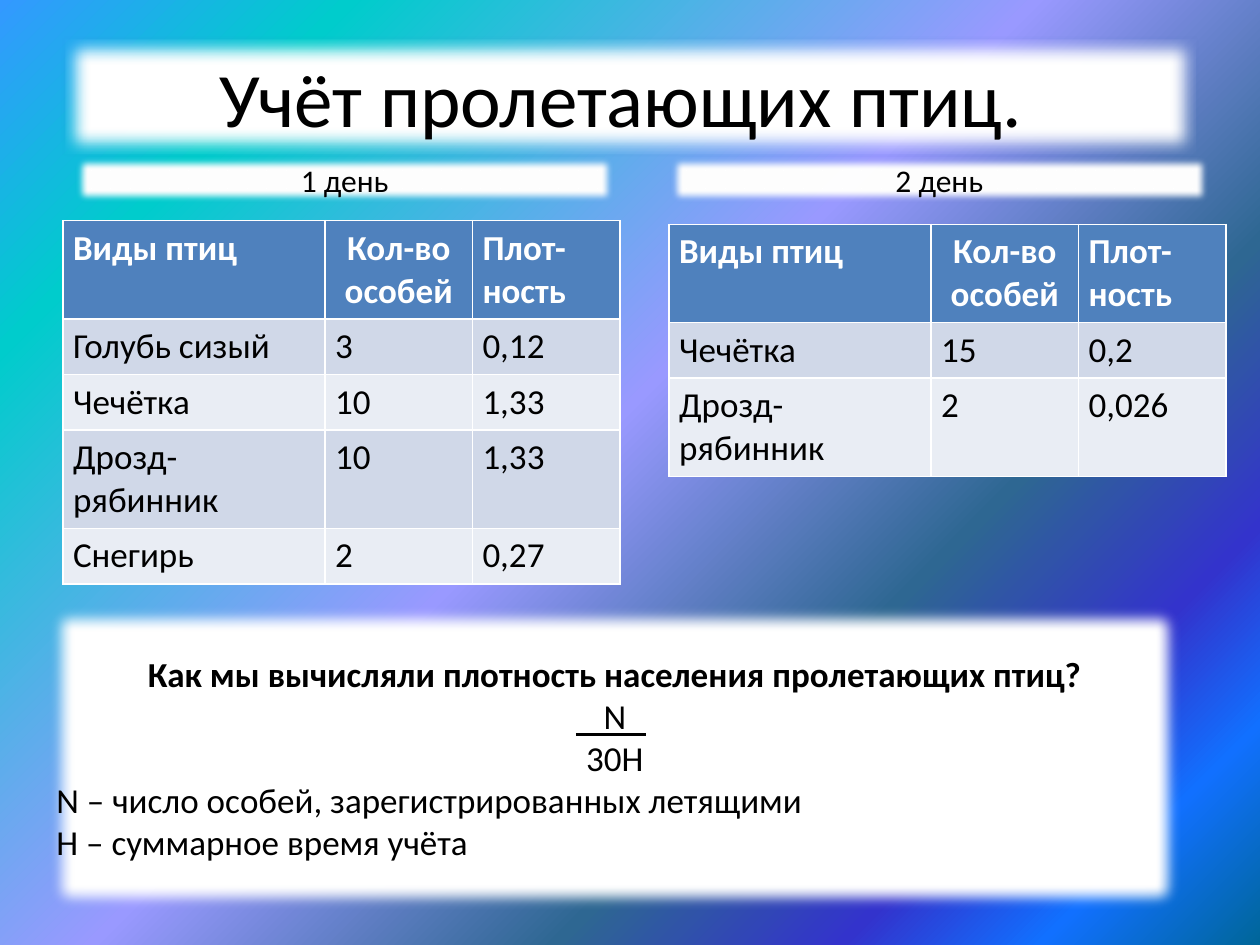
"""Build a slide comparing two days of counting birds in flight."""
from dataclasses import dataclass

from lxml.etree import SubElement
from pptx import Presentation
from pptx.dml.color import RGBColor
from pptx.enum.shapes import MSO_CONNECTOR, MSO_SHAPE
from pptx.enum.text import MSO_ANCHOR, PP_ALIGN
from pptx.oxml.ns import qn
from pptx.slide import Slide
from pptx.util import Inches, Pt

WHITE = RGBColor(0xFF, 0xFF, 0xFF)
BLACK = RGBColor(0x00, 0x00, 0x00)
BLUE = RGBColor(0x4F, 0x81, 0xBD)
DARK_BLUE = RGBColor(0x3A, 0x5F, 0x8C)
BAND_DARK = RGBColor(0xD0, 0xD8, 0xE8)
BAND_LIGHT = RGBColor(0xE9, 0xED, 0xF4)
BACKGROUND = [
    (0, RGBColor(0x33, 0x99, 0xFF)),
    (16, RGBColor(0x00, 0xCC, 0xCC)),
    (47, RGBColor(0x99, 0x99, 0xFF)),
    (68, RGBColor(0x2E, 0x67, 0x92)),
    (81, RGBColor(0x33, 0x33, 0xCC)),
    (90, RGBColor(0x11, 0x70, 0xFF)),
    (100, RGBColor(0x00, 0x66, 0x99)),
]

HEADER = ["Виды птиц", "Кол-во особей", "Плот-ность"]
FIRST_DAY = [
    ["Голубь сизый", "3", "0,12"],
    ["Чечётка", "10", "1,33"],
    ["Дрозд-рябинник", "10", "1,33"],
    ["Снегирь", "2", "0,27"],
]
SECOND_DAY = [["Чечётка", "15", "0,2"], ["Дрозд-рябинник", "2", "0,026"]]
COLUMN_WIDTHS = [20.8, 11.7, 11.7]
ROW_HEIGHT = 4.1


def grid(units):
    """Convert units of a 100 by 75 grid to a length."""
    return Inches(units / 10)


@dataclass
class Painter:
    """Hold the style and the current slide."""

    page: Slide
    font: str = "Calibri"
    size: int = 20

    def background(self, stops):
        """Fill the slide with a diagonal gradient."""
        fill = self.page.background.fill
        fill.gradient()
        fill.gradient_angle = 315
        stop_list = next(self.page.background._cSld.iter(qn("a:gsLst")))
        for stop in list(stop_list):
            stop_list.remove(stop)
        for position, color in stops:
            stop = SubElement(stop_list, qn("a:gs"), pos=str(position * 1000))
            SubElement(stop, qn("a:srgbClr"), val=str(color))

    def add_text(self, para, text, size=None, color=BLACK, bold=False, align=PP_ALIGN.LEFT):
        """Add one formatted run to a paragraph."""
        para.alignment = align
        span = para.add_run()
        span.text = text
        span.font.name = self.font
        span.font.size = Pt(size or self.size)
        span.font.bold = bold
        span.font.color.rgb = color

    def soften(self, box, line_color, radius):
        """Give a box a white fill, an outline and soft edges."""
        box.fill.solid()
        box.fill.fore_color.rgb = WHITE
        box.line.color.rgb = line_color
        box.line.width = Pt(2)
        box.shadow.inherit = False
        effects = box._element.spPr.find(qn("a:effectLst"))
        SubElement(effects, qn("a:softEdge"), rad=str(int(Pt(radius))))
        box.text_frame.word_wrap = True
        box.text_frame.vertical_anchor = MSO_ANCHOR.MIDDLE

    def title(self, text, left, top, width, height):
        """Place and format the title placeholder."""
        box = self.page.shapes.title
        box.left, box.top = grid(left), grid(top)
        box.width, box.height = grid(width), grid(height)
        self.soften(box, BLUE, 9)
        self.add_text(box.text_frame.paragraphs[0], text, 44, align=PP_ALIGN.CENTER)

    def panel(self, lines, left, top, width, height, radius):
        """Add a soft white panel with one paragraph per line."""
        box = self.page.shapes.add_shape(
            MSO_SHAPE.RECTANGLE, grid(left), grid(top), grid(width), grid(height))
        self.soften(box, DARK_BLUE, radius)
        frame = box.text_frame
        for index, (text, style) in enumerate(lines):
            para = frame.add_paragraph() if index else frame.paragraphs[0]
            self.add_text(para, text, **style)

    def table(self, rows, left, top):
        """Add a banded table below the common header."""
        records = [HEADER, *rows]
        table = self.page.shapes.add_table(
            len(records), len(HEADER), grid(left), grid(top),
            grid(sum(COLUMN_WIDTHS)), grid(ROW_HEIGHT * len(records))).table
        for column, width in zip(table.columns, COLUMN_WIDTHS):
            column.width = grid(width)
        for row, record in enumerate(records):
            band = BAND_DARK if row % 2 else BAND_LIGHT
            for column, text in enumerate(record):
                cell = table.cell(row, column)
                cell.margin_left = cell.margin_right = grid(0.8)
                cell.fill.solid()
                cell.fill.fore_color.rgb = band if row else BLUE
                centred = row == 0 and column == 1
                self.add_text(
                    cell.text_frame.paragraphs[0], text,
                    color=BLACK if row else WHITE, bold=row == 0,
                    align=PP_ALIGN.CENTER if centred else PP_ALIGN.LEFT)

    def fraction_bar(self, left, right, height):
        """Draw the bar of the fraction."""
        bar = self.page.shapes.add_connector(
            MSO_CONNECTOR.STRAIGHT, grid(left), grid(height), grid(right), grid(height))
        bar.line.color.rgb = BLACK
        bar.line.width = Pt(2)
        SubElement(bar._element.spPr, qn("a:effectLst"))


def main():
    """Create the deck and save it."""
    deck = Presentation()
    deck.slide_width, deck.slide_height = grid(100), grid(75)
    painter = Painter(deck.slides.add_slide(deck.slide_layouts[5]))
    centred = {"align": PP_ALIGN.CENTER}

    painter.background(BACKGROUND)
    painter.title("Учёт пролетающих птиц. ", 5, 3, 90, 9.3)
    painter.table(FIRST_DAY, 5, 17.5)
    painter.panel([
        ("Как мы вычисляли плотность населения пролетающих птиц?", {"bold": True, **centred}),
        ("N", centred),
        ("30H", centred),
        ("N – число особей, зарегистрированных летящими", {}),
        ("H – суммарное время учёта", {}),
    ], 3.5, 47.7, 90.6, 24.9, 9)
    painter.fraction_bar(45.7, 51.3, 58.3)
    painter.table(SECOND_DAY, 53.1, 17.8)
    for text, left in (("1 день", 5.9), ("2 день", 53.1)):
        painter.panel([(text, {"size": 18, **centred})], left, 12.3, 42.9, 3.9, 5)
    deck.save("out.pptx")


if __name__ == "__main__":
    main()
